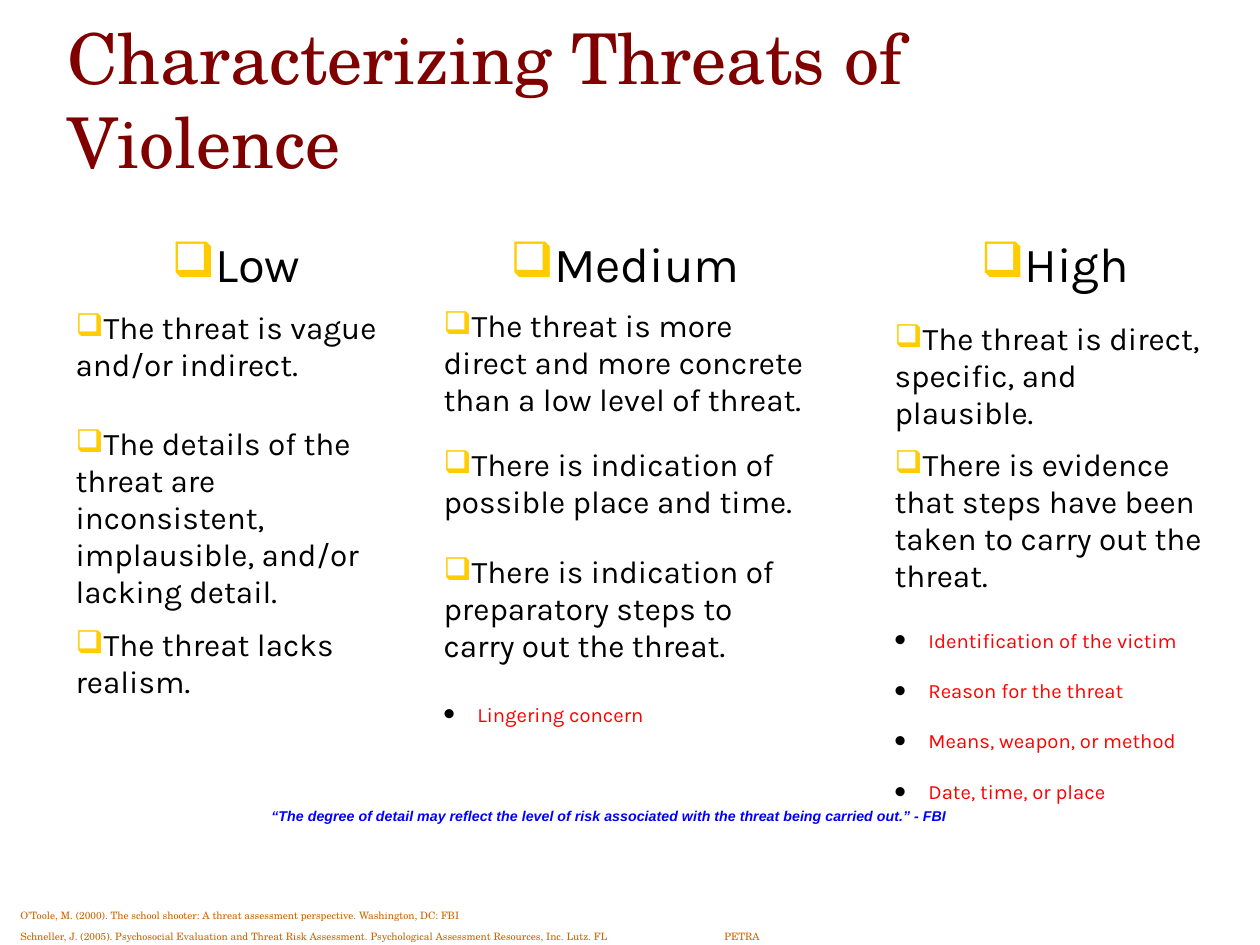
from dataclasses import dataclass
from lxml import etree
from pptx import Presentation
from pptx.dml.color import RGBColor
from pptx.enum.text import MSO_ANCHOR, PP_ALIGN
from pptx.oxml.ns import qn
from pptx.util import Pt

TOP, BOTTOM = MSO_ANCHOR.TOP, MSO_ANCHOR.BOTTOM
LEFT, CENTER = PP_ALIGN.LEFT, PP_ALIGN.CENTER
SCALE = 914400 / 126


@dataclass(frozen=True)
class Style:
    font: str
    size: int
    color: str
    bold: bool = False
    slant: bool = False
    raised: bool = False


@dataclass(frozen=True)
class Theme:
    title: Style = Style("TeX Gyre Schola", 40, "800000")
    head: Style = Style("Karla", 28, "000000")
    body: Style = Style("Karla", 18, "000000")
    point: Style = Style("Karla", 20, "FF0000", raised=True)
    quote: Style = Style("Arial", 14, "0000FF", True, True, True)
    source: Style = Style("TeX Gyre Schola", 10, "CC6600", raised=True)
    box: str = "FFCC00"
    dot: str = "000000"


THEME = Theme()

LEVELS = [
    (63, 346, [
        (73, "Low"),
        (116, "The threat is vague and/or indirect."),
        (188, "The details of the threat are inconsistent, implausible, "
              "and/or lacking detail."),
        (94, "The threat lacks realism."),
    ]),
    (882, 346, [
        (84, "High"),
        (105, "The threat is direct, specific, and plausible."),
        (263, "There is evidence that steps have been taken to carry out "
              "the threat."),
    ]),
    (431, 388, [
        (71, "Medium"),
        (139, "The threat is more direct and more concrete than a low level "
              "of threat."),
        (107, "There is indication of possible place and time."),
        (166, "There is indication of preparatory steps to carry out "
              "the threat."),
    ]),
]

SOURCES = [
    "O’Toole, M. (2000). The school shooter: A threat assessment perspective. "
    "Washington, DC: FBI",
    "Schneller, J. (2005). Psychosocial Evaluation and Threat Risk Assessment. "
    "Psychological Assessment Resources, Inc. Lutz. FL\tPETRA",
]

QUOTE = ("“The degree of detail may reflect the level of risk associated with "
         "the threat being carried out.” - FBI")

SIGNS = ["Identification of the victim", "Reason for the threat",
         "Means, weapon, or method", "Date, time, or place"]


def px(count):
    return round(count * SCALE)


def write(para, text, style, align=LEFT):
    para.text = text
    para.alignment = align
    for run in para.runs:
        font = run.font
        font.name, font.size = style.font, Pt(style.size)
        font.bold, font.italic = style.bold, style.slant
        font.color.rgb = RGBColor.from_string(style.color)
        if style.raised:
            run._r.get_or_add_rPr().set("baseline", "30000")


def add_mark(para, char, color, indent=0):
    props = para._p.get_or_add_pPr()
    props.set("marL", str(px(indent)))
    props.set("indent", str(-px(indent)))
    tint = etree.SubElement(props, qn("a:buClr"))
    etree.SubElement(tint, qn("a:srgbClr"), val=color)
    etree.SubElement(props, qn("a:buChar"), char=char)


def add_tab(para, place):
    stops = etree.SubElement(para._p.get_or_add_pPr(), qn("a:tabLst"))
    etree.SubElement(stops, qn("a:tab"), pos=str(px(place)), algn="l")


def add_text(slide, area, lines, style, align=LEFT, anchor=TOP):
    box = slide.shapes.add_textbox(*map(px, area))
    frame = box.text_frame
    frame.word_wrap = True
    frame.vertical_anchor = anchor
    frame.text = "\n".join(lines)
    for para, line in zip(frame.paragraphs, lines):
        write(para, line, style, align)
    return frame.paragraphs


def add_list(slide, area, lines):
    for para in add_text(slide, area, lines, THEME.point):
        add_mark(para, "•", THEME.dot, 34)
        para.line_spacing = 1.2


def add_level(slide, left, width, rows):
    high = sum(tall for tall, text in rows)
    frame = slide.shapes.add_table(
        len(rows), 1, px(left), px(231), px(width), px(high))
    table = frame.table
    table.first_row = table.horz_banding = False
    for index, (tall, text) in enumerate(rows):
        table.rows[index].height = px(tall)
        cell = table.cell(index, 0)
        cell.fill.background()
        para = cell.text_frame.paragraphs[0]
        add_mark(para, "❑", THEME.box)
        if index:
            write(para, text, THEME.body)
        else:
            write(para, text, THEME.head, CENTER)


def main():
    deck = Presentation()
    deck.slide_width, deck.slide_height = px(1260), px(945)
    slide = deck.slides.add_slide(deck.slide_layouts[6])
    add_text(slide, (55, 32, 1142, 157),
             ["Characterizing Threats of Violence"], THEME.title, anchor=BOTTOM)
    for left, width, rows in LEVELS:
        add_level(slide, left, width, rows)
    notes = add_text(slide, (8, 901, 1252, 54), SOURCES, THEME.source)
    add_tab(notes[-1], 704)
    add_text(slide, (0, 798, 1218, 42), [QUOTE], THEME.quote, CENTER)
    add_list(slide, (882, 609, 346, 144), SIGNS)
    add_list(slide, (431, 683, 346, 45), ["Lingering concern"])
    deck.save("out.pptx")


if __name__ == "__main__":
    main()
